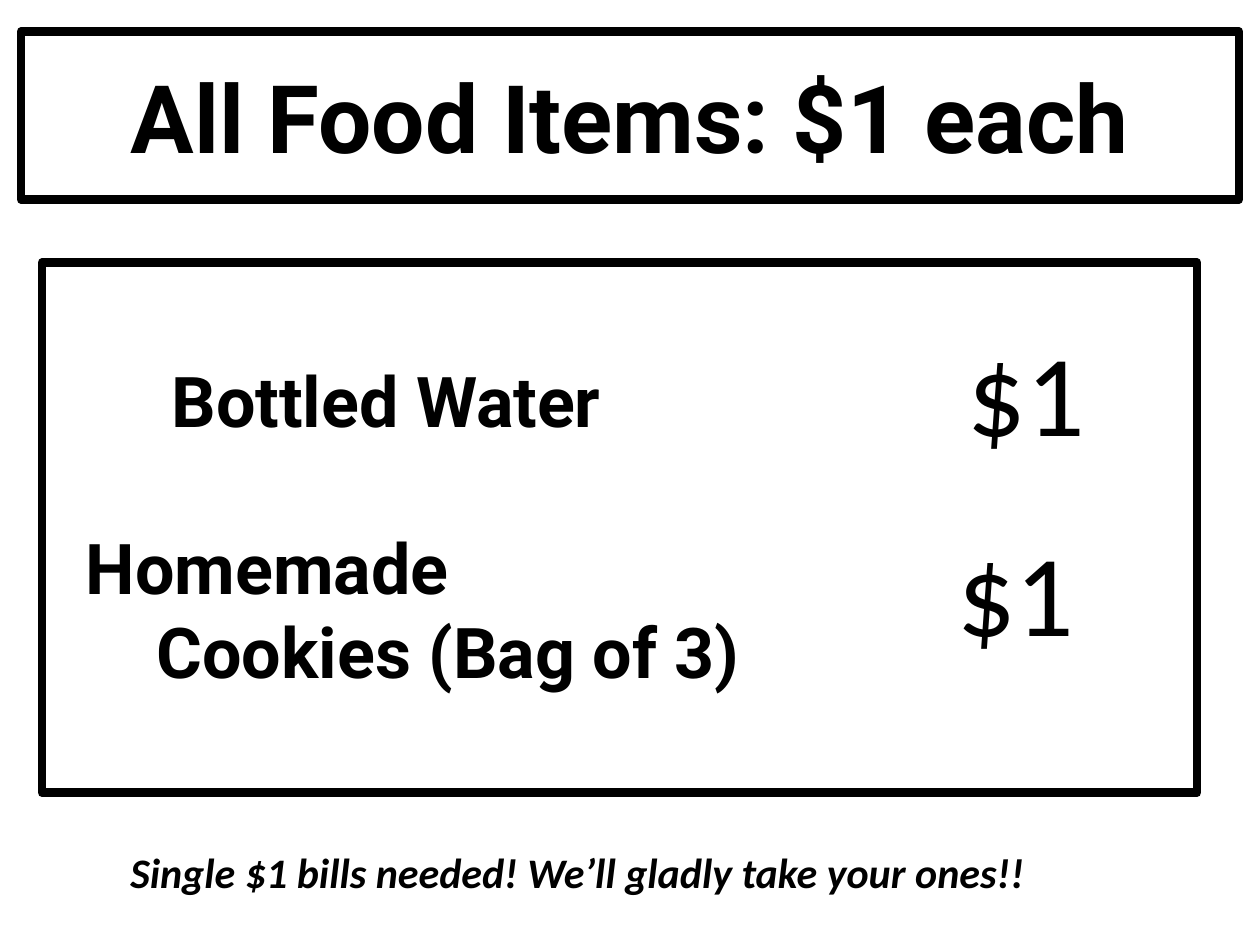
"""Build a price sign with a framed heading, a framed item list and a closing note."""
from dataclasses import dataclass

from pptx import Presentation
from pptx.dml.color import RGBColor
from pptx.enum.shapes import MSO_SHAPE
from pptx.enum.text import MSO_ANCHOR, PP_ALIGN
from pptx.slide import Slide
from pptx.util import Inches, Pt

BLACK = RGBColor(0, 0, 0)
WHITE = RGBColor(255, 255, 255)
RECT = MSO_SHAPE.RECTANGLE
TOP, MIDDLE = MSO_ANCHOR.TOP, MSO_ANCHOR.MIDDLE
LEFT, CENTER = PP_ALIGN.LEFT, PP_ALIGN.CENTER
CELL = Inches(1) // 12
COLS, ROWS = 120, 90

HEADING = {"name": "Roboto", "size": Pt(54), "bold": True}
ITEM = {"name": "Roboto", "size": Pt(40), "bold": True}
PRICE = {"name": "Calibri", "size": Pt(66)}
NOTE = {"name": "Calibri", "size": Pt(24), "bold": True, "italic": True}


@dataclass(frozen=True)
class Line:
    text: str
    indent: float = 0
    before: float = 0


@dataclass(frozen=True)
class Block:
    col: float
    row: float
    cols: float
    rows: float
    lines: tuple[Line, ...]
    font: dict
    align: PP_ALIGN = LEFT
    anchor: MSO_ANCHOR = TOP
    framed: bool = False
    top_inset: float = 0.05


BLOCKS = (
    Block(2, 3, 116, 16, (Line("All Food Items: $1 each"),), HEADING,
          CENTER, MIDDLE, framed=True),
    Block(4, 25, 110, 50.5,
          (Line("Bottled Water", 0.93),
           Line("Homemade", 0.25, 48),
           Line("Cookies (Bag of 3)", 0.81)),
          ITEM, framed=True, top_inset=0.75),
    Block(91, 30, 18, 14.5, (Line("$1"),), PRICE),
    Block(90, 49, 18, 14.5, (Line("$1"),), PRICE),
    Block(9, 80, 92, 6,
          (Line("Single $1 bills needed! We’ll gladly take your ones!!"),),
          NOTE, CENTER),
)


def draw_block(s: Slide, block: Block) -> None:
    """Draw one block of text, with a frame if it has one."""
    box = [round(n * CELL) for n in (block.col, block.row, block.cols, block.rows)]
    if block.framed:
        sp = s.shapes.add_shape(RECT, *box)
        sp.shadow.inherit = False
        sp.fill.solid()
        sp.fill.fore_color.rgb = WHITE
        sp.line.color.rgb = BLACK
        sp.line.width = Pt(5)
    else:
        sp = s.shapes.add_textbox(*box)
    tf = sp.text_frame
    tf.word_wrap = True
    tf.vertical_anchor = block.anchor
    tf.margin_top = Inches(block.top_inset)
    for i, line in enumerate(block.lines):
        p = tf.add_paragraph() if i else tf.paragraphs[0]
        p.alignment = block.align
        p.space_before = Pt(line.before)
        p._p.get_or_add_pPr().set("marL", str(Inches(line.indent)))
        r = p.add_run()
        r.text = line.text
        r.font.color.rgb = BLACK
        for key, value in block.font.items():
            setattr(r.font, key, value)


def main() -> None:
    """Create the slide and save it."""
    prs = Presentation()
    prs.slide_width, prs.slide_height = COLS * CELL, ROWS * CELL
    s = prs.slides.add_slide(prs.slide_layouts[6])
    for block in BLOCKS:
        draw_block(s, block)
    prs.save("out.pptx")


if __name__ == "__main__":
    main()
